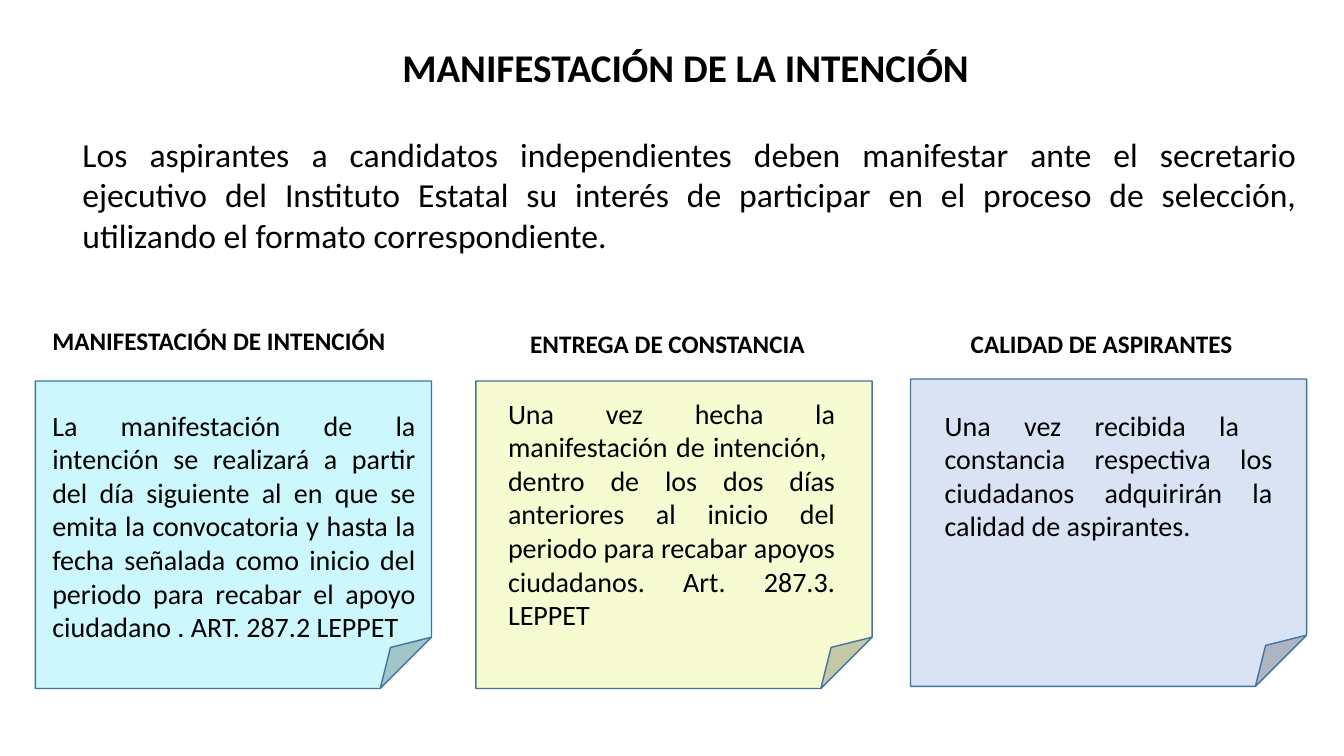
"""Build the slide on the declaration of intent of independent candidates."""
from typing import NamedTuple

from pptx import Presentation
from pptx.dml.color import RGBColor
from pptx.enum.shapes import MSO_SHAPE
from pptx.enum.text import MSO_AUTO_SIZE, PP_ALIGN
from pptx.util import Inches, Pt

FOLDED = MSO_SHAPE.FOLDED_CORNER
FIT = MSO_AUTO_SIZE.SHAPE_TO_FIT_TEXT
LEFT, CENTER, JUSTIFY = PP_ALIGN.LEFT, PP_ALIGN.CENTER, PP_ALIGN.JUSTIFY
FONT = "Calibri"
COLORS = {"text": "000000", "line": "43739E", "cyan": "CBF7FD",
          "yellow": "F7FBD1", "blue": "DAE3F3"}
SLIDE_W, SLIDE_H = Inches(13.33), Inches(7.5)
COL, ROW = SLIDE_W / 100, SLIDE_H / 100


class Box(NamedTuple):
    """Left, top, width and height in hundredths of the slide."""
    x: float
    y: float
    w: float
    h: float

    def emu(self) -> tuple[int, int, int, int]:
        """Return the box in slide units."""
        return (round(self.x * COL), round(self.y * ROW),
                round(self.w * COL), round(self.h * ROW))


class Note(NamedTuple):
    """A folded note with its heading and its body text."""
    fill: str
    box: Box
    heading: str
    heading_box: Box
    body: str
    body_box: Box


NOTE_W, NOTE_H = 29.48, 40.67
HEAD_W, HEAD_H = 27.5, 5.33
NOTES = [
    Note("cyan", Box(2.63, 50.4, NOTE_W, NOTE_H),
         "MANIFESTACIÓN DE INTENCIÓN", Box(3.15, 42.4, HEAD_W, HEAD_H),
         "La manifestación de la intención se realizará a partir del día "
         "siguiente al en que se emita la convocatoria y hasta la fecha "
         "señalada como inicio del periodo para recabar el apoyo "
         "ciudadano . ART. 287.2 LEPPET", Box(3.15, 53.33, 28.51, 32.8)),
    Note("yellow", Box(35.41, 50.4, NOTE_W, NOTE_H),
         "ENTREGA DE CONSTANCIA", Box(38.71, 42.8, HEAD_W, HEAD_H),
         "Una vez hecha la manifestación de intención,  dentro de los dos "
         "días anteriores al inicio del periodo para recabar apoyos "
         "ciudadanos. Art. 287.3. LEPPET", Box(37.06, 51.73, 25.81, 32.8)),
    Note("blue", Box(67.74, 50.13, NOTE_W, NOTE_H),
         "CALIDAD DE ASPIRANTES", Box(71.49, 42.8, HEAD_W, HEAD_H),
         "Una vez recibida la  constancia respectiva los ciudadanos "
         "adquirirán la calidad de aspirantes.", Box(69.54, 53.33, 25.88, 19.33)),
]


def rgb(name: str) -> RGBColor:
    """Return a named colour."""
    return RGBColor.from_string(COLORS[name])


def add_text(s, text: str, box: Box, *, size: float, bold: bool = False,
             align: PP_ALIGN = LEFT) -> None:
    """Add a wrapped text box with one formatted paragraph."""
    tf = s.shapes.add_textbox(*box.emu()).text_frame
    tf.word_wrap = True
    tf.auto_size = FIT
    p = tf.paragraphs[0]
    p.alignment = align
    r = p.add_run()
    r.text = text
    r.font.name, r.font.size, r.font.bold = FONT, Pt(size), bold
    r.font.color.rgb = rgb("text")


def add_note(s, note: Note) -> None:
    """Add a folded note, its heading and its body."""
    sp = s.shapes.add_shape(FOLDED, *note.box.emu())
    sp.shadow.inherit = False
    sp.fill.solid()
    sp.fill.fore_color.rgb = rgb(note.fill)
    sp.line.color.rgb = rgb("line")
    sp.line.width = Pt(1)
    add_text(s, note.body, note.body_box, size=20, align=JUSTIFY)
    add_text(s, note.heading, note.heading_box, size=18, bold=True)


def main() -> None:
    """Build and save the presentation."""
    prs = Presentation()
    prs.slide_width, prs.slide_height = SLIDE_W, SLIDE_H
    s = prs.slides.add_slide(prs.slide_layouts[6])
    add_text(s, "MANIFESTACIÓN DE LA INTENCIÓN", Box(26.78, 5.07, 48.46, 7.6),
             size=28, bold=True, align=CENTER)
    add_text(s, "Los aspirantes a candidatos independientes deben manifestar "
             "ante el secretario ejecutivo del Instituto Estatal su interés de "
             "participar en el proceso de selección, utilizando el formato "
             "correspondiente.", Box(5.4, 17.07, 91.82, 17.47),
             size=24, align=JUSTIFY)
    for note in NOTES:
        add_note(s, note)
    prs.save("out.pptx")


if __name__ == "__main__":
    main()
